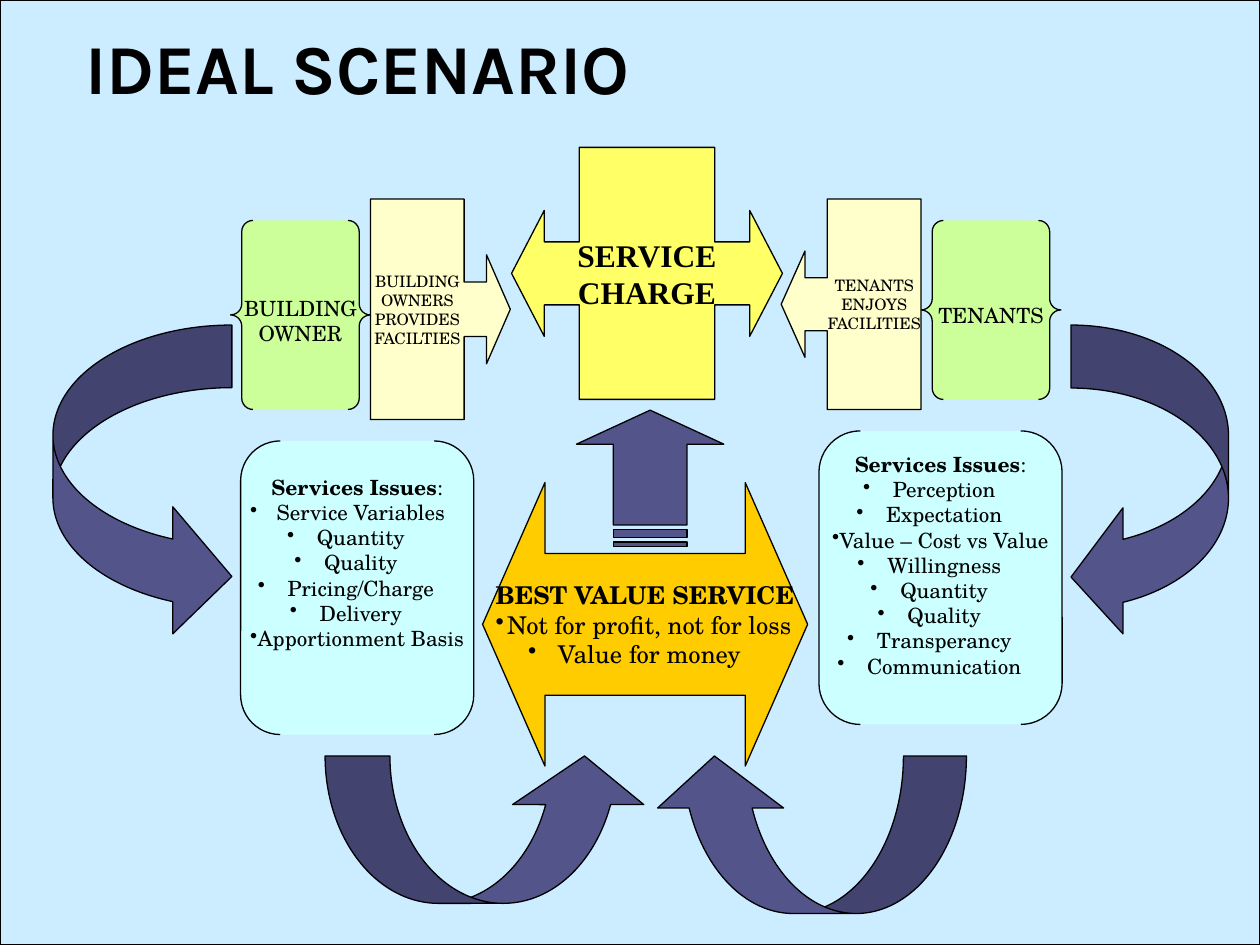
from lxml.etree import SubElement
from pptx import Presentation
from pptx.dml.color import RGBColor
from pptx.enum.shapes import MSO_SHAPE as Shape
from pptx.enum.text import MSO_ANCHOR as Anchor, PP_ALIGN as Align
from pptx.oxml.ns import qn
from pptx.util import Inches, Pt

BLACK, SKY, INDIGO = "000000", "CCECFF", "53548A"
LIME, CREAM, AQUA = "CCFF99", "FFFFCC", "CCFFFF"
SERIF, TIMES, SANS = "TeX Gyre Schola", "Times New Roman", "Karla"

# kind, (left, top, width, height), adjustments, fill, rotation
ARROWS = [
    (Shape.CURVED_UP_ARROW, (2.58, 6, 2.58, 1.17), (0.44, 0.89, 0.33), 0),
    (Shape.CURVED_DOWN_ARROW, (5.17, 6, 2.5, 1.25), (0.4, 0.8, 0.33), 180),
    (Shape.STRIPED_RIGHT_ARROW, (4.62, 3.21, 1.08, 1.17), (0.5, 0.25), 270),
    (Shape.CURVED_RIGHT_ARROW, (0.42, 2.58, 1.42, 2.5), (0.35, 0.71, 0.33), 0),
    (Shape.CURVED_LEFT_ARROW, (8.5, 2.58, 1.25, 2.5), (0.4, 0.8, 0.33), 0),
]
LABELS = [
    (Shape.LEFT_RIGHT_ARROW_CALLOUT, (4.06, 1.17, 2.15, 2), (0.25, 0.25, 0.13, 0.5),
     "FFFF66", TIMES, 18, True, ["SERVICE", "CHARGE"]),
    (Shape.DOUBLE_BRACE, (1.83, 1.75, 1.11, 1.5), (0.08,),
     LIME, SERIF, 12, False, ["BUILDING", "OWNER"]),
    (Shape.DOUBLE_BRACE, (7.31, 1.75, 1.11, 1.42), (0.08,),
     LIME, SERIF, 12, False, ["TENANTS"]),
    (Shape.RIGHT_ARROW_CALLOUT, (2.94, 1.58, 1.11, 1.75), (0.39, 0.39, 0.17, 0.67),
     CREAM, SERIF, 9, False, ["BUILDING", "OWNERS", "PROVIDES", "FACILTIES"]),
    (Shape.LEFT_ARROW_CALLOUT, (6.2, 1.58, 1.11, 1.67), (0.38, 0.38, 0.17, 0.67),
     CREAM, SERIF, 9, False, ["TENANTS", "ENJOYS", "FACILITIES"]),
]
# kind, box, adjustments, fill, size, bottom inset, heading, heading tail, bullets
LISTS = [
    (Shape.DOUBLE_BRACKET, (1.91, 3.5, 1.85, 2.33), (0.17,), AQUA, 12, 0.45,
     "Services Issues", ":",
     ["Service Variables", "Quantity", "Quality", "Pricing/Charge", "Delivery",
      "Apportionment Basis"]),
    (Shape.DOUBLE_BRACKET, (6.5, 3.42, 1.93, 2.33), (0.17,), AQUA, 12, 0.25,
     "Services Issues", ":",
     ["Perception", "Expectation", "Value – Cost vs Value", "Willingness", "Quantity",
      "Quality", "Transperancy", "Communication"]),
    (Shape.LEFT_RIGHT_ARROW, (3.83, 3.83, 2.58, 2.25), (0.5, 0.22), "FFCC00", 14, 0.05,
     "BEST VALUE SERVICE", "",
     ["Not for profit, not for loss", "Value for money"]),
]


def color(value):
    """Turn a hex string into a colour."""
    return RGBColor.from_string(value)


def add_shape(slide, kind, box, adjustments, fill, rotation=0, line_width=0.75):
    """Add a filled preset shape with a black outline."""
    shape = slide.shapes.add_shape(kind, *map(Inches, box))
    shape.shadow.inherit = False
    shape.rotation = rotation
    for index, value in enumerate(adjustments):
        shape.adjustments[index] = value
    shape.fill.solid()
    shape.fill.fore_color.rgb = color(fill)
    shape.line.color.rgb = color(BLACK)
    shape.line.width = Pt(line_width)
    return shape


def add_run(paragraph, text, font_name, size, bold=False):
    """Add one black run to a paragraph."""
    run = paragraph.add_run()
    run.text = text
    run.font.name = font_name
    run.font.size = Pt(size)
    run.font.bold = bold
    run.font.color.rgb = color(BLACK)


def write_paragraphs(shape, rows, font_name, size, bottom=0.05):
    """Write centred rows, each a bullet flag and its (text, bold) runs."""
    frame = shape.text_frame
    frame.word_wrap = False
    frame.vertical_anchor = Anchor.MIDDLE
    frame.margin_bottom = Inches(bottom)
    for index, (bulleted, runs) in enumerate(rows):
        paragraph = frame.add_paragraph() if index else frame.paragraphs[0]
        paragraph.alignment = Align.CENTER
        if bulleted:
            properties = paragraph._p.get_or_add_pPr()
            SubElement(properties, qn("a:buFontTx"))
            SubElement(properties, qn("a:buChar"), char="•")
        for text, bold in runs:
            add_run(paragraph, text, font_name, size, bold)


def add_title(slide, text):
    """Place the title in front of the backdrop."""
    title = slide.shapes.title
    title.left, title.top, title.width, title.height = map(Inches, (0.58, 0.25, 9.25, 0.56))
    slide.shapes.element.append(title.element)
    title.text_frame.vertical_anchor = Anchor.MIDDLE
    paragraph = title.text_frame.paragraphs[0]
    paragraph.alignment = Align.LEFT
    add_run(paragraph, text, SANS, 40, True)


def main():
    """Build the slide and save it."""
    presentation = Presentation()
    presentation.slide_width, presentation.slide_height = Inches(10), Inches(7.5)
    slide = presentation.slides.add_slide(presentation.slide_layouts[5])
    add_shape(slide, Shape.RECTANGLE, (0, 0, 10, 7.5), (), SKY, line_width=1.5)
    for kind, box, adjustments, fill, font_name, size, bold, lines in LABELS:
        shape = add_shape(slide, kind, box, adjustments, fill)
        rows = [(False, [(line, bold)]) for line in lines]
        write_paragraphs(shape, rows, font_name, size)
    for kind, box, adjustments, fill, size, bottom, heading, tail, bullets in LISTS:
        shape = add_shape(slide, kind, box, adjustments, fill)
        heading_runs = [(heading, True)] + ([(tail, False)] if tail else [])
        rows = [(False, heading_runs)] + [(True, [(bullet, False)]) for bullet in bullets]
        write_paragraphs(shape, rows, SERIF, size, bottom)
    for kind, box, adjustments, rotation in ARROWS:
        add_shape(slide, kind, box, adjustments, INDIGO, rotation)
    add_title(slide, "IDEAL SCENARIO")
    presentation.save("out.pptx")


if __name__ == "__main__":
    main()
